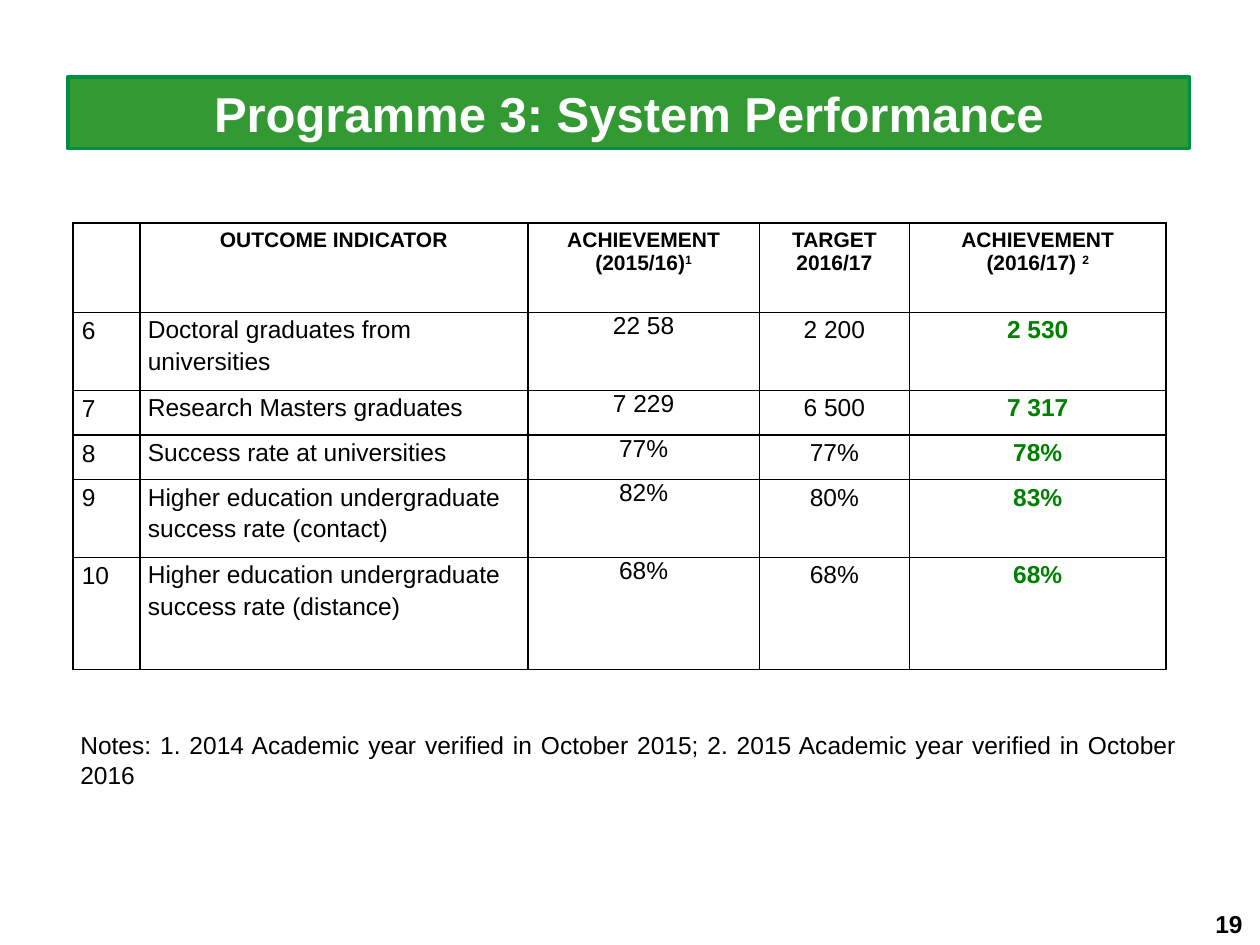
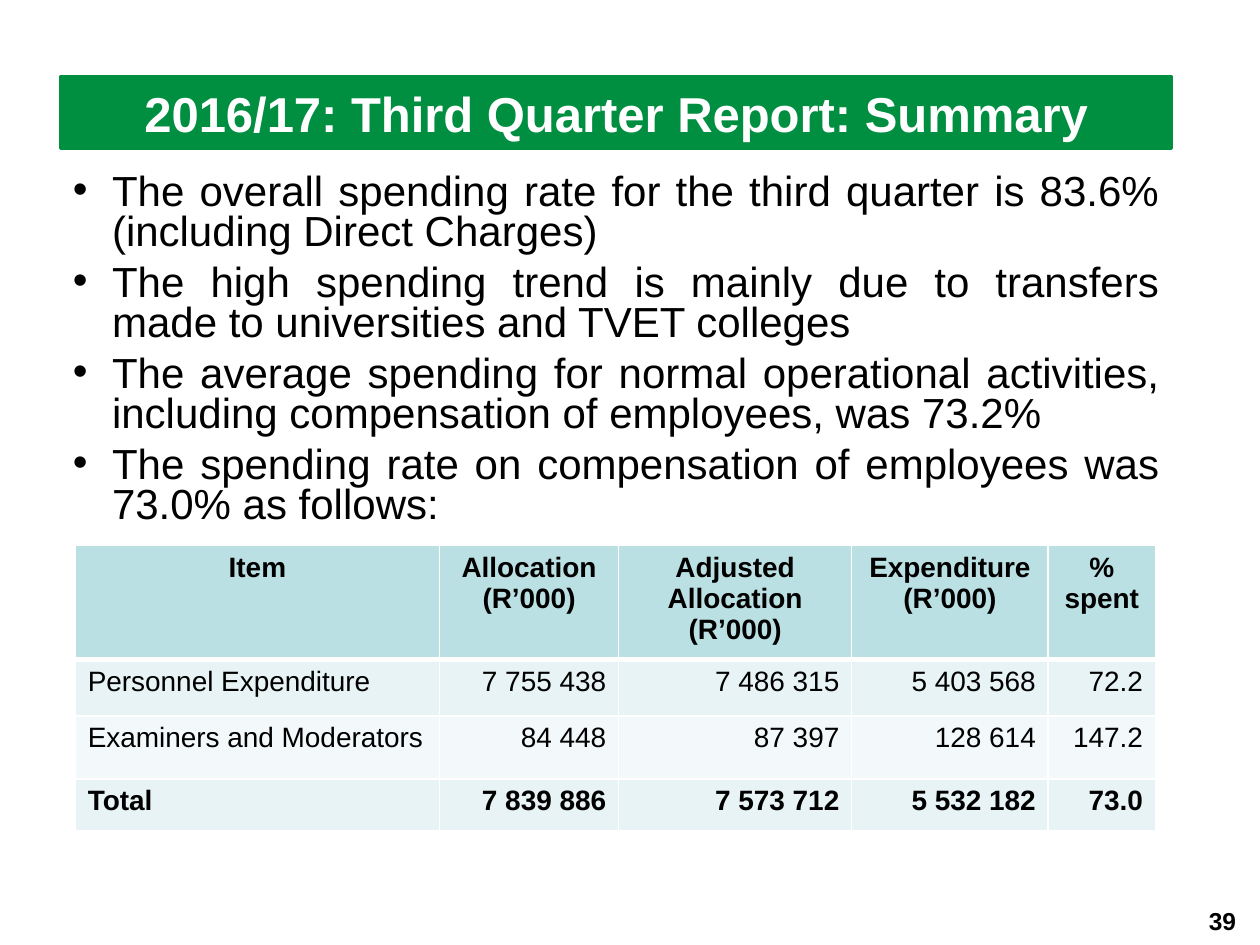
from lxml.etree import SubElement
from pptx import Presentation
from pptx.dml.color import RGBColor
from pptx.enum.shapes import MSO_SHAPE
from pptx.enum.text import MSO_ANCHOR, PP_ALIGN
from pptx.oxml.ns import qn
from pptx.util import Cm, Pt

COLORS = {
    "band": "339933", "edge": "008E40", "white": "FFFFFF", "black": "000000",
    "result": "008000", "header": "BBE0E3", "odd": "E7F3F4", "even": "F3F9FA",
}
FONT = "Arial"
LEFT, CENTER, RIGHT, JUSTIFY = (
    PP_ALIGN.LEFT, PP_ALIGN.CENTER, PP_ALIGN.RIGHT, PP_ALIGN.JUSTIFY)
HEADER_INSETS = (0.18, 0.1)
BODY_INSETS = (0.16, 0)
ROOMY_INSETS = (0.25, 0.13)

INDICATORS = [
    ["", "OUTCOME INDICATOR", "ACHIEVEMENT\n(2015/16)^1", "TARGET\n2016/17",
     "ACHIEVEMENT (2016/17) ^2"],
    ["6", "Doctoral graduates from universities", "22 58", "2 200", "2 530"],
    ["7", "Research Masters graduates", "7 229", "6 500", "7 317"],
    ["8", "Success rate at universities", "77%", "77%", "78%"],
    ["9", "Higher education undergraduate success rate (contact)", "82%", "80%", "83%"],
    ["10", "Higher education undergraduate success rate (distance)", "68%", "68%", "68%"],
]
SPENDING = [
    ["Item", "Allocation\n(R’000)", "Adjusted Allocation\n(R’000)",
     "Expenditure (R’000)", "%\nspent"],
    ["Personnel Expenditure", "7 755 438", "7 486 315", "5 403 568", "72.2"],
    ["Examiners and Moderators", "84 448", "87 397", "128 614", "147.2"],
    ["Total", "7 839 886", "7 573 712", "5 532 182", "73.0"],
]
SUMMARY = [
    "The overall spending rate for the third quarter is 83.6% (including Direct Charges)",
    "The high spending trend is mainly due to transfers made to universities and TVET colleges",
    "The average spending for normal operational activities, including compensation of "
    "employees, was 73.2%",
    "The spending rate on compensation of employees was 73.0% as follows:",
]
NOTES = ("Notes: 1. 2014 Academic year verified in October 2015; "
         "2. 2015 Academic year verified in October 2016")


def color(name):
    """Return the named colour."""
    return RGBColor.from_string(COLORS[name])


def write(frame, text, size, align=LEFT, bold=False, ink="black", spacing=None):
    """Fill a frame with one paragraph per line; a caret starts a superscript."""
    frame.word_wrap = True
    for index, line in enumerate(text.split("\n")):
        para = frame.add_paragraph() if index else frame.paragraphs[0]
        para.alignment = align
        para.line_spacing = spacing
        para.font.name, para.font.size, para.font.bold = FONT, Pt(size), bold
        para.font.color.rgb = color(ink)
        base, _, raised = line.partition("^")
        para.add_run().text = base
        if raised:
            span = para.add_run()
            span.text = raised
            span.font._element.set("baseline", "30000")


def add_title(page, box, text, fill):
    """Draw the green title band."""
    band = page.shapes.add_shape(MSO_SHAPE.RECTANGLE, *map(Cm, box))
    band.shadow.inherit = False
    band.fill.solid()
    band.fill.fore_color.rgb = color(fill)
    band.line.color.rgb = color("edge")
    band.line.width = Pt(2)
    band.text_frame.vertical_anchor = MSO_ANCHOR.MIDDLE
    write(band.text_frame, text, 28, CENTER, True, "white")


def add_text(page, box, text, size, align, **style):
    """Place a text box and return its frame."""
    frame = page.shapes.add_textbox(*map(Cm, box)).text_frame
    write(frame, text, size, align, **style)
    return frame


def add_page_number(page, left, top, number):
    """Place the page number in the lower right corner."""
    add_text(page, (left, top, 5.92, 0.8), number, 14, RIGHT, bold=True)


def add_bullets(page, box, lines):
    """Place a justified bullet list."""
    frame = add_text(page, box, "\n".join(lines), 24, JUSTIFY, spacing=0.8)
    for para in frame.paragraphs:
        para.space_before = Pt(6)
        properties = para._p.get_or_add_pPr()
        properties.set("marL", str(Cm(0.79)))
        properties.set("indent", str(-Cm(0.79)))
        SubElement(properties, qn("a:buFont")).set("typeface", FONT)
        SubElement(properties, qn("a:buChar")).set("char", "•")


def add_grid(page, left, top, widths, heights):
    """Add a table without banding, sized by its columns and rows."""
    box = (left, top, sum(widths), sum(heights))
    table = page.shapes.add_table(len(heights), len(widths), *map(Cm, box)).table
    table.first_row = table.horz_banding = False
    for column, width in zip(table.columns, widths):
        column.width = Cm(width)
    for row, height in zip(table.rows, heights):
        row.height = Cm(height)
    return table


def style_cell(cell, insets, ink, fill=None, top=1, bottom=1):
    """Set the insets, border lines and fill of a cell."""
    cell.margin_left = cell.margin_right = Cm(insets[0])
    cell.margin_top = cell.margin_bottom = Cm(insets[1])
    properties = cell._tc.get_or_add_tcPr()
    for side, width in (("L", 1), ("R", 1), ("T", top), ("B", bottom)):
        line = SubElement(properties, qn(f"a:ln{side}"), w=str(Pt(width)))
        solid = SubElement(line, qn("a:solidFill"))
        SubElement(solid, qn("a:srgbClr"), val=COLORS[ink])
    if fill:
        cell.fill.solid()
        cell.fill.fore_color.rgb = color(fill)
    else:
        cell.fill.background()


def add_indicator_table(page, left, top):
    """Build the outcome indicator table."""
    widths = [1.35, 7.82, 4.67, 3.02, 5.18]
    heights = [1.8, 1.57, 0.9, 0.9, 1.57, 2.26]
    table = add_grid(page, left, top, widths, heights)
    for i, row in enumerate(INDICATORS):
        for j, text in enumerate(row):
            cell = table.cell(i, j)
            header, result = i == 0, i > 0 and j == 4
            style_cell(cell, HEADER_INSETS if header or j == 0 else BODY_INSETS, "black")
            write(cell.text_frame, text, 12 if header else 14,
                  CENTER if header or j > 1 else LEFT, header or result,
                  "result" if result else "black",
                  None if header or j in (0, 2) else 1.15)


def add_spending_table(page, left, top):
    """Build the personnel spending table."""
    widths = [7.34, 3.61, 4.7, 3.96, 2.16]
    heights = [2.24, 1.14, 1.27, 1.04]
    fills = ["header", "odd", "even", "odd"]
    table = add_grid(page, left, top, widths, heights)
    for i, row in enumerate(SPENDING):
        for j, text in enumerate(row):
            cell = table.cell(i, j)
            style_cell(cell, ROOMY_INSETS, "white", fills[i],
                       top=3 if i == 1 else 1, bottom=3 if i == 0 else 1)
            align = CENTER if i == 0 else RIGHT if j else LEFT
            write(cell.text_frame, text, 16, align, i in (0, len(SPENDING) - 1))


def build_performance(page):
    """Build the system performance slide."""
    add_title(page, (1.37, 1.55, 22.61, 1.45), "Programme 3: System Performance", "band")
    add_indicator_table(page, 1.47, 4.5)
    add_text(page, (1.37, 14.6, 22.61, 1.4), NOTES, 14, JUSTIFY)
    add_page_number(page, 19.38, 18.21, "19")


def build_summary(page):
    """Build the third quarter summary slide."""
    add_title(page, (1.22, 1.55, 22.4, 1.45),
              "2016/17: Third Quarter Report: Summary", "edge")
    add_bullets(page, (1.22, 3.38, 22.4, 7.5), SUMMARY)
    add_spending_table(page, 1.52, 11)
    add_page_number(page, 19.25, 18.14, "39")


def main():
    """Create the deck and save it."""
    deck = Presentation()
    deck.slide_width, deck.slide_height = Cm(25.4), Cm(19.05)
    for build in (build_performance, build_summary):
        build(deck.slides.add_slide(deck.slide_layouts[6]))
    deck.save("out.pptx")


if __name__ == "__main__":
    main()
